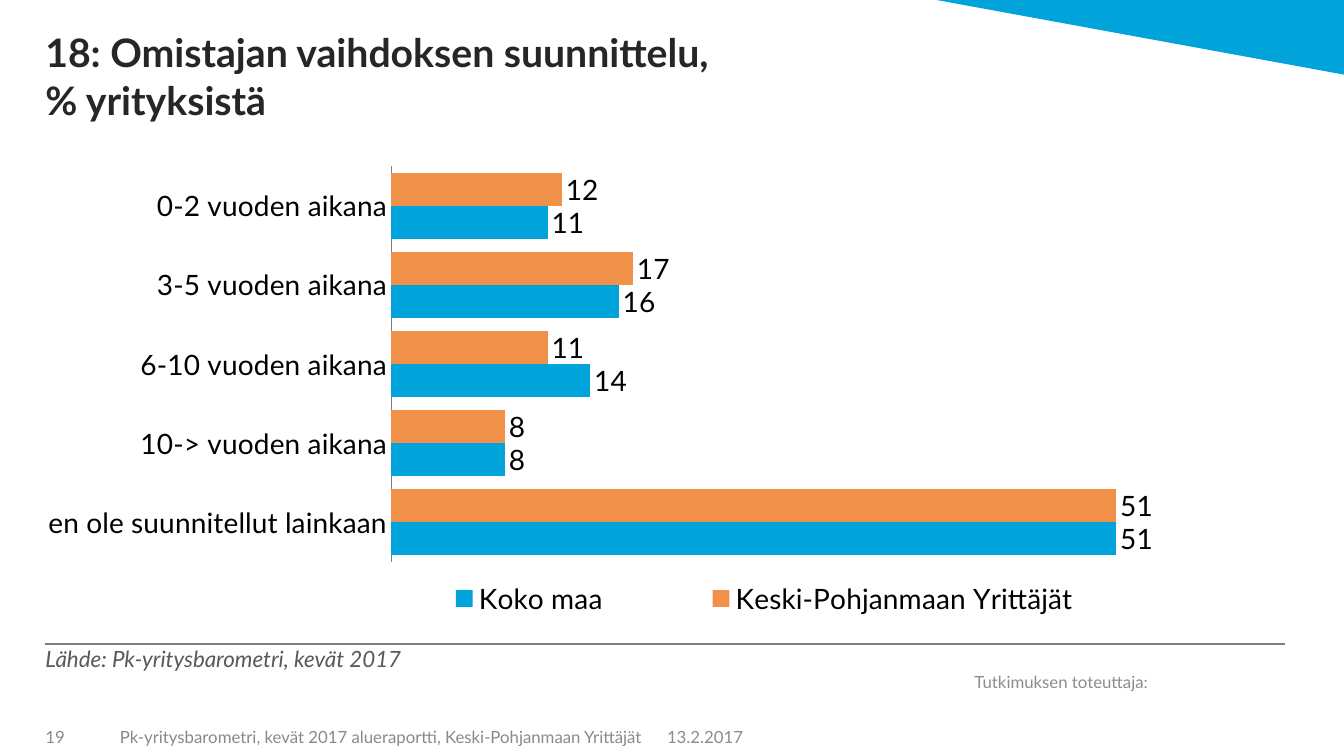
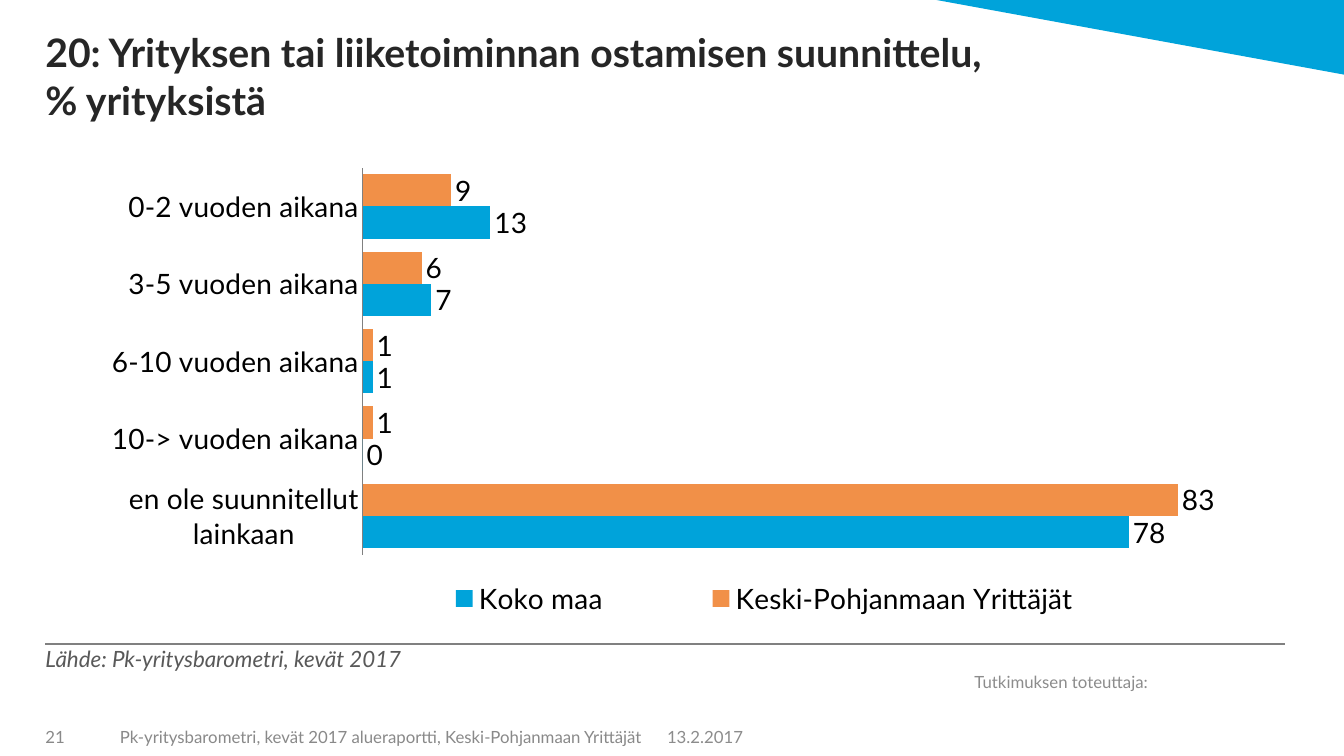
from lxml.etree import SubElement
from pptx import Presentation
from pptx.chart.data import CategoryChartData
from pptx.dml.color import RGBColor
from pptx.enum.chart import XL_CHART_TYPE, XL_LABEL_POSITION, XL_LEGEND_POSITION, XL_TICK_MARK
from pptx.enum.shapes import MSO_CONNECTOR, MSO_SHAPE
from pptx.enum.text import MSO_ANCHOR
from pptx.oxml.ns import qn
from pptx.util import Pt

FONT = "Lato"
HEX = {
    "blue": "00A3DA", "orange": "F19048", "black": "000000", "title": "262626",
    "source": "595959", "rule": "808080", "foot": "898989", "note": "8C8C8C",
}
WIDE, HIGH = 960, 540
LEFT, SPAN = 32.4, 885.6
FLAT = (0, 0, 0, 0)
INSET = (7.2, 3.6, 7.2, 3.6)
CATS = ["0-2 vuoden aikana", "3-5 vuoden aikana", "6-10 vuoden aikana",
        "10-> vuoden aikana", "en ole suunnitellut lainkaan"]
NAMES = {"Keski-Pohjanmaan Yrittäjät": "orange", "Koko maa": "blue"}
PAGES = [
    {"num": "19", "title": ["18: Omistajan vaihdoksen suunnittelu,", "% yrityksistä"],
     "vals": [(12, 17, 11, 8, 51), (11, 16, 14, 8, 51)],
     "plot": (0.279, 0.021, 0.688, 0.832), "top": 60},
    {"num": "21", "title": ["20: Yrityksen tai liiketoiminnan ostamisen suunnittelu,", "% yrityksistä"],
     "vals": [(9, 6, 1, 1, 83), (13, 7, 1, 0, 78)],
     "plot": (0.256, 0.024, 0.713, 0.814), "top": 90},
]


def tint(name):
    return RGBColor.from_string(HEX[name])


def points(box):
    return [Pt(n) for n in box]


def style(font, size, color, bold=False, italic=False):
    font.name, font.size = FONT, Pt(size)
    font.bold, font.italic = bold, italic
    font.color.rgb = tint(color)


def write(slide, box, lines, size, color, anchor=MSO_ANCHOR.MIDDLE, inset=INSET, **look):
    frame = slide.shapes.add_textbox(*points(box)).text_frame
    frame.word_wrap = True
    frame.vertical_anchor = anchor
    (frame.margin_left, frame.margin_top,
     frame.margin_right, frame.margin_bottom) = points(inset)
    para = frame.paragraphs[0]
    for spot, line in enumerate(lines):
        if spot:
            para.add_line_break()
        run = para.add_run()
        run.text = line
        style(run.font, size, color, **look)


def corner(slide, box):
    shape = slide.shapes.add_shape(MSO_SHAPE.RIGHT_TRIANGLE, *points(box))
    shape.rotation = 180
    shape.shadow.inherit = False
    shape.fill.solid()
    shape.fill.fore_color.rgb = tint("blue")
    shape.line.fill.background()


def footer(slide, box, num):
    x, y, wide, high = box
    rule = slide.shapes.add_connector(MSO_CONNECTOR.STRAIGHT, *points((x, y, x + wide, y)))
    rule.line.color.rgb = tint("rule")
    rule.line.width = Pt(1.5)
    SubElement(rule._element.spPr, qn("a:effectLst"))
    write(slide, (x, y + 0.8, 764.6, 31), ["Lähde: Pk-yritysbarometri, kevät 2017"],
          16, "source", MSO_ANCHOR.TOP, FLAT, italic=True)
    write(slide, (x + 656.6, y + 12.2, 157, 29.5), ["Tutkimuksen toteuttaja:"], 12, "note")
    row = y + high - 26.6
    write(slide, (x, row, 45.4, 25.2), [num], 12, "foot", inset=(0, 3.6, 7.2, 3.6))
    write(slide, (x + 46.1, row, 389.5, 25.2),
          ["Pk-yritysbarometri, kevät 2017 alueraportti, Keski-Pohjanmaan Yrittäjät"], 12, "foot")
    write(slide, (x + 437, row, 95.8, 25.2), ["13.2.2017"], 12, "note")


def layout(part, box, inner=False):
    old = part.find(qn("c:layout"))
    if old is not None:
        part.remove(old)
    node = SubElement(part, qn("c:layout"))
    after = part.find(qn("c:legendPos"))
    part.remove(node)
    part.insert(0 if after is None else part.index(after) + 1, node)
    manual = SubElement(node, qn("c:manualLayout"))
    if inner:
        SubElement(manual, qn("c:layoutTarget")).set("val", "inner")
    for key in ("xMode", "yMode"):
        SubElement(manual, qn("c:" + key)).set("val", "edge")
    for key, val in zip("xywh", box):
        SubElement(manual, qn("c:" + key)).set("val", str(val))


def bars(slide, box, page):
    data = CategoryChartData(number_format="#,##0")
    data.categories = CATS
    for name, vals in zip(NAMES, page["vals"]):
        data.add_series(name, vals)
    chart = slide.shapes.add_chart(XL_CHART_TYPE.BAR_CLUSTERED, *points(box), data).chart
    style(chart.font, 20, "black")
    chart.has_title = False
    axis = chart.category_axis
    axis.reverse_order = True
    axis.major_tick_mark = axis.minor_tick_mark = XL_TICK_MARK.NONE
    axis.format.line.color.rgb = tint("rule")
    axis.format.line.width = Pt(0.75)
    scale = chart.value_axis
    scale.visible = False
    scale.has_major_gridlines = False
    scale.minimum_scale, scale.maximum_scale = 0, page["top"]
    plot = chart.plots[0]
    plot.gap_width, plot.overlap = 40, 0
    plot.vary_by_categories = False
    for series, color in zip(plot.series, NAMES.values()):
        series.format.fill.solid()
        series.format.fill.fore_color.rgb = tint(color)
        labels = series.data_labels
        labels.show_value = True
        labels.position = XL_LABEL_POSITION.OUTSIDE_END
        labels.number_format, labels.number_format_is_linked = "#,##0", False
        style(labels.font, 20, "black")
    chart.has_legend = True
    legend = chart.legend
    legend.position = XL_LEGEND_POSITION.RIGHT
    legend.include_in_layout = False
    style(legend.font, 20, "black")
    layout(legend._element, (0.25, 0.88, 0.66, 0.1))
    layout(chart._chartSpace.chart.plotArea, page["plot"], True)


def build(deck, page):
    slide = deck.slides.add_slide(deck.slide_layouts[6])
    corner(slide, (WIDE - 291, 0, 291, 53.3))
    write(slide, (LEFT, 0, SPAN, 87.8), page["title"], 28, "title",
          MSO_ANCHOR.BOTTOM, FLAT, bold=True)
    bars(slide, (LEFT, 111.6, SPAN, 339.8), page)
    footer(slide, (LEFT, 460, SPAN, HIGH - 460), page["num"])


def main():
    deck = Presentation()
    deck.slide_width, deck.slide_height = Pt(WIDE), Pt(HIGH)
    for page in PAGES:
        build(deck, page)
    deck.save("out.pptx")


if __name__ == "__main__":
    main()
